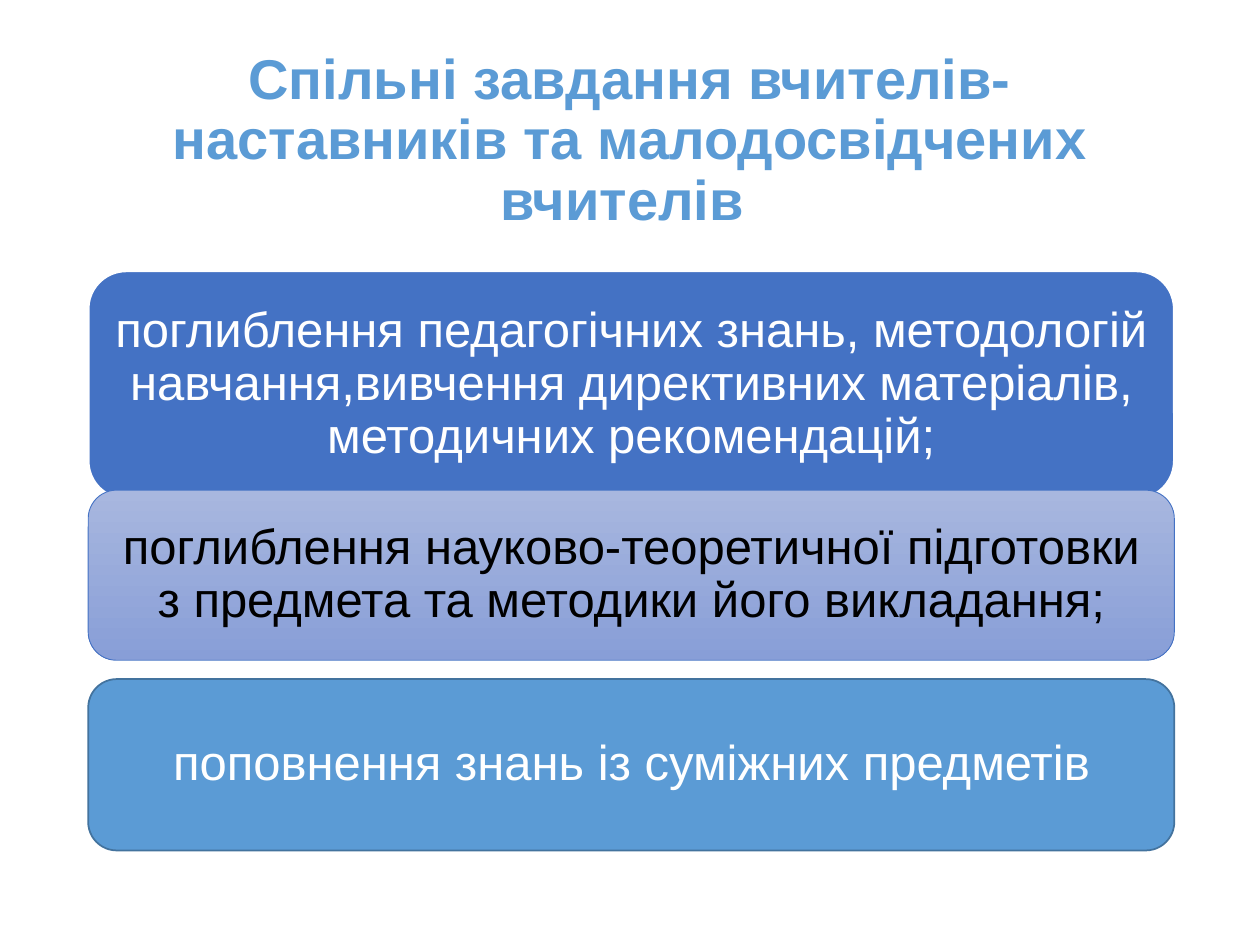
from dataclasses import dataclass

from pptx import Presentation
from pptx.dml.color import RGBColor
from pptx.enum.shapes import MSO_SHAPE
from pptx.enum.text import MSO_ANCHOR, MSO_AUTO_SIZE, PP_ALIGN
from pptx.util import Pt

ROUNDED = MSO_SHAPE.ROUNDED_RECTANGLE
CENTER = PP_ALIGN.CENTER
MIDDLE = MSO_ANCHOR.MIDDLE
NO_AUTOFIT = MSO_AUTO_SIZE.NONE
TITLE_ONLY = 5
DOWNWARD = 270


@dataclass(frozen=True)
class Theme:
    font: str = "Arial"
    title_size: int = 32
    card_size: int = 28
    white: str = "FFFFFF"
    black: str = "000000"
    blue: str = "4472C4"
    sky: str = "5B9BD5"
    sky_edge: str = "43739E"
    pale_top: str = "A8B7DF"
    pale_bottom: str = "889ED7"


THEME = Theme()
CARD_LEFT, CARD_WIDTH = 50.4, 620.64


def rgb(value):
    return RGBColor.from_string(value)


def write_text(tf, text, *, size, color, bold=False):
    tf.word_wrap = True
    tf.auto_size = NO_AUTOFIT
    tf.vertical_anchor = MIDDLE
    p = tf.paragraphs[0]
    p.alignment = CENTER
    p.line_spacing = 0.9
    r = p.add_run()
    r.text = text
    r.font.name = THEME.font
    r.font.size = Pt(size)
    r.font.bold = bold
    r.font.color.rgb = rgb(color)


def add_title(slide, text):
    sp = slide.shapes.title
    sp.left, sp.top, sp.width, sp.height = Pt(49.68), Pt(28.8), Pt(620.64), Pt(104.4)
    write_text(sp.text_frame, text, size=THEME.title_size, color=THEME.sky, bold=True)


def fill_shape(sp, colors):
    """Fill with one colour, or fade downward between two."""
    if len(colors) == 1:
        sp.fill.solid()
        sp.fill.fore_color.rgb = rgb(colors[0])
        return
    sp.fill.gradient()
    sp.fill.gradient_angle = DOWNWARD
    for stop, color in zip(sp.fill.gradient_stops, colors):
        stop.color.rgb = rgb(color)


def add_card(slide, text, *, top, height, fill, edge, edge_width, color):
    sp = slide.shapes.add_shape(ROUNDED, Pt(CARD_LEFT), Pt(top), Pt(CARD_WIDTH), Pt(height))
    sp.shadow.inherit = False
    fill_shape(sp, fill)
    sp.line.color.rgb = rgb(edge)
    sp.line.width = Pt(edge_width)
    tf = sp.text_frame
    tf.margin_left = tf.margin_right = Pt(8.4)
    tf.margin_top = tf.margin_bottom = Pt(4.2)
    write_text(tf, text, size=THEME.card_size, color=color)


def main():
    prs = Presentation()
    prs.slide_width, prs.slide_height = Pt(720), Pt(540)
    slide = prs.slides.add_slide(prs.slide_layouts[TITLE_ONLY])
    add_title(slide, "Спільні завдання вчителів-наставників та малодосвідчених вчителів ")
    add_card(slide, "поглиблення педагогічних знань, методологій навчання,вивчення "
             "директивних матеріалів, методичних рекомендацій;",
             top=154.8, height=130.32, fill=[THEME.blue],
             edge=THEME.white, edge_width=1.5, color=THEME.white)
    add_card(slide, "поглиблення науково-теоретичної підготовки з предмета "
             "та методики його викладання;",
             top=280.08, height=97.2, fill=[THEME.pale_top, THEME.pale_bottom],
             edge=THEME.blue, edge_width=0.5, color=THEME.black)
    add_card(slide, "поповнення знань із суміжних предметів",
             top=388.08, height=97.92, fill=[THEME.sky],
             edge=THEME.sky_edge, edge_width=1, color=THEME.white)
    prs.save("out.pptx")


if __name__ == "__main__":
    main()
